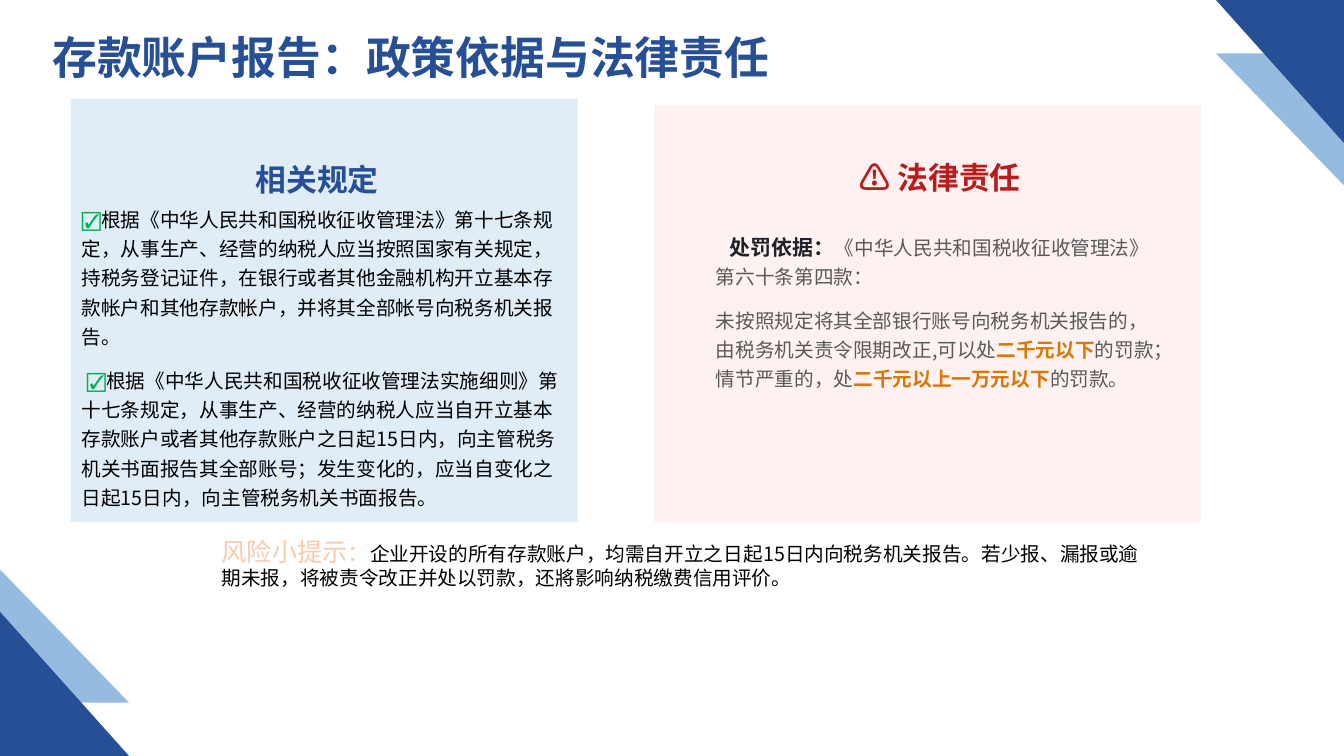
from dataclasses import dataclass
from lxml.etree import SubElement
from pptx import Presentation
from pptx.dml.color import RGBColor
from pptx.enum.shapes import MSO_SHAPE
from pptx.enum.text import MSO_ANCHOR, MSO_AUTO_SIZE, PP_ALIGN
from pptx.oxml import parse_xml
from pptx.oxml.ns import nsdecls, qn
from pptx.util import Inches, Pt


@dataclass(frozen=True)
class Theme:
    font: str = "Noto Sans CJK SC"
    latin: str = "Arial"
    navy: str = "274F95"
    sky: str = "96BBE0"
    ice: str = "E0ECF6"
    rose: str = "FDF2F1"
    red: str = "B91C1C"
    green: str = "00B050"
    amber: str = "D97706"
    peach: str = "F8CBAD"
    edge: str = "ED7D31"
    black: str = "000000"
    ink: str = "1F2329"
    gray: str = "595959"
    title: int = 32
    head: int = 22
    tip: int = 18
    colon: int = 16
    lead: int = 15
    body: int = 14


theme = Theme()
deck = Presentation()
deck.slide_width, deck.slide_height = Inches(13.33), Inches(7.5)
slide = deck.slides.add_slide(deck.slide_layouts[6])


def add_block(kind, box, color, turn=0):
    block = slide.shapes.add_shape(kind, *map(Inches, box))
    block.shadow.inherit = False
    block.fill.solid()
    block.fill.fore_color.rgb = RGBColor.from_string(color)
    block.line.fill.background()
    block.rotation = turn
    return block


def add_text(box, paras, inset=(0, 0), anchor=MSO_ANCHOR.TOP, align=None, spacing=None):
    """Each paragraph is (first-line indent, runs); a run is (text, size, color, bold)."""
    shape = slide.shapes.add_textbox(*map(Inches, box))
    frame = shape.text_frame
    frame.word_wrap = True
    frame.vertical_anchor = anchor
    frame.margin_left = frame.margin_right = Inches(inset[0])
    frame.margin_top = frame.margin_bottom = Inches(inset[1])
    for i, (indent, runs) in enumerate(paras):
        para = frame.add_paragraph() if i else frame.paragraphs[0]
        para.alignment = align
        para.line_spacing = spacing
        if i:
            para.space_before = Pt(10)
        if indent:
            para._p.get_or_add_pPr().set("indent", str(Inches(indent)))
        for text, size, color, bold in runs:
            run = para.add_run()
            run.text = text
            run.font.size, run.font.bold = Pt(size), bold
            run.font.color.rgb = RGBColor.from_string(color)
            run.font.name = theme.font
            SubElement(run._r.get_or_add_rPr(), qn("a:ea")).set("typeface", theme.font)
    return frame


# Corner triangles
for height, top, low, color in ((1.32, 0.53, 5.65, theme.sky), (1.43, 0, 6.07, theme.navy)):
    add_block(MSO_SHAPE.RIGHT_TRIANGLE, (12.06, top, 1.28, height), color, 180)
    add_block(MSO_SHAPE.RIGHT_TRIANGLE, (0, low, 1.28, height), color)

add_text((0.42, 0.15, 8.33, 0.83),
         [(0, [("存款账户报告：政策依据与法律责任", theme.title, theme.navy, True)])],
         (0.1, 0.06), MSO_ANCHOR.MIDDLE)

# Panels with their headings
panels = (
    ((0.7, 0.98, 5.03, 4.2), theme.ice, (0.95, 1.43, 4.39, 0.69), "相关规定", theme.navy),
    ((6.49, 1.04, 5.42, 4.14), theme.rose, (6.13, 1.41, 6.39, 0.69), "⚠ 法律责任", theme.red),
)
for area, fill, box, head, color in panels:
    add_block(MSO_SHAPE.ROUNDED_RECTANGLE, area, fill).adjustments[0] = 0
    add_text(box, [(0, [(head, theme.head, color, True)])],
             anchor=MSO_ANCHOR.MIDDLE, align=PP_ALIGN.CENTER)

# Rules
rules = (
    (0, "根据《中华人民共和国税收征收管理法》第十七条规定，从事生产、经营的纳税人应当按照国家有关规定，"
        "持税务登记证件，在银行或者其他金融机构开立基本存款帐户和其他存款帐户，并将其全部帐号向税务机关报告。"),
    (0.05, "根据《中华人民共和国税收征收管理法实施细则》第十七条规定，从事生产、经营的纳税人应当自开立基本"
           "存款账户或者其他存款账户之日起15日内，向主管税务机关书面报告其全部账号；发生变化的，"
           "应当自变化之日起15日内，向主管税务机关书面报告。"),
)
add_text((0.67, 1.86, 5.06, 4.23),
         [(indent, [("☑", theme.body, theme.green, False), (rule, theme.body, theme.black, False)])
          for indent, rule in rules],
         (0.14, 0.14), spacing=1.25)

# Penalties
plain = (theme.body, theme.gray, False)
strong = (theme.body, theme.amber, True)
add_text((6.96, 2.12, 4.74, 3.33), [
    (0.14, [("处罚依据：", theme.lead, theme.ink, True),
            ("《中华人民共和国税收征收管理法》第六十条第四款：", *plain)]),
    (0, [("未按照规定将其全部银行账号向税务机关报告的，由税务机关责令限期改正,可以处", *plain),
         ("二千元以下", *strong),
         ("的罚款；情节严重的，处", *plain),
         ("二千元以上一万元以下", *strong),
         ("的罚款。", *plain)]),
], (0.14, 0.14), spacing=1.25)

# Risk tip with outlined lead
tip = add_text((2.1, 5.27, 9.32, 0.64), [(0, [
    ("风险小提示", theme.tip, theme.peach, False),
    ("：", theme.colon, theme.peach, False),
    ("企业开设的所有存款账户，均需自开立之日起15日内向税务机关报告。若少报、漏报或逾期未报，"
     "将被责令改正并处以罚款，还將影响纳税缴费信用评价。", theme.body, theme.black, False),
])], (0.1, 0.05))
tip.auto_size = MSO_AUTO_SIZE.SHAPE_TO_FIT_TEXT
lead, colon = tip.paragraphs[0].runs[:2]
colon.font.name = theme.latin
for run in (lead, colon):
    run._r.get_or_add_rPr().insert(0, parse_xml(
        f'<a:ln {nsdecls("a")} w="{Pt(1.75)}"><a:solidFill>'
        f'<a:srgbClr val="{theme.edge}"/></a:solidFill></a:ln>'))

deck.save("out.pptx")
